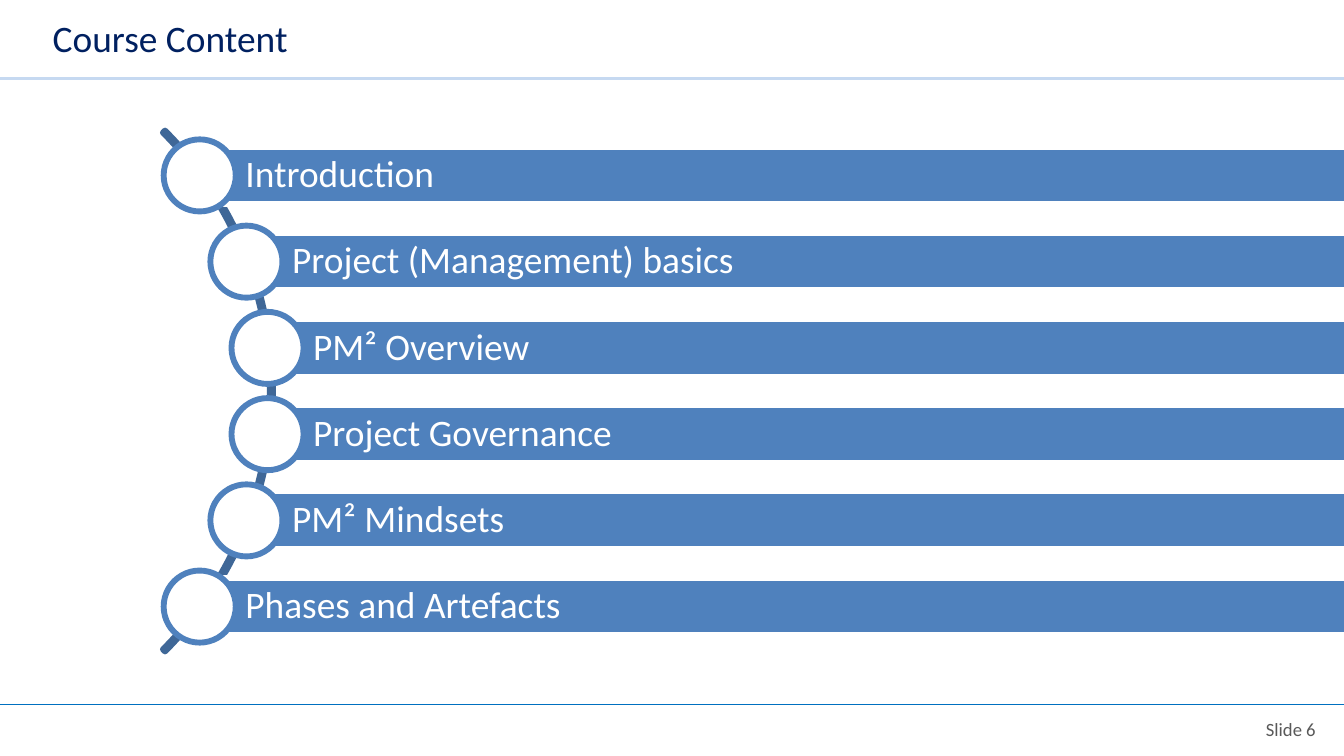
import math
import pptx
import pptx.util
import pptx.dml.color
import pptx.enum.shapes
import pptx.enum.text
import lxml.etree

Pt = pptx.util.Pt
Shape = pptx.enum.shapes.MSO_SHAPE
Align = pptx.enum.text.PP_ALIGN

TITLE = "Course Content"
FOOTER = "Slide 6"
TOPICS = [
    "Introduction",
    "Project (Management) basics",
    "PM² Overview",
    "Project Governance",
    "PM² Mindsets",
    "Phases and Artefacts",
]
THEME = {
    "font": "Calibri", "large": 20, "small": 10, "stroke": 3.15,
    "navy": "002060", "grey": "595959", "white": "FFFFFF",
    "bar": "4F81BD", "arc": "3F6797", "head": "C6D9F1", "foot": "0070C0",
}
WIDE, HIGH = 720, 405
MID_X, MID_Y = -51.1, 209.5
ARC, TRACK = 197.3, 195.8
STEP, BAR, DOT = 46.2, 30.9, 38.6
BAR_END = 727


def color(name):
    return pptx.dml.color.RGBColor.from_string(THEME[name])


def write(shape, text, size="large", ink="white", align=Align.LEFT,
          pads=(7.2, 3.6, 7.2, 3.6), space=1):
    frame = shape.text_frame
    frame.word_wrap = True
    frame.auto_size = pptx.enum.text.MSO_AUTO_SIZE.NONE
    frame.vertical_anchor = pptx.enum.text.MSO_ANCHOR.MIDDLE
    (frame.margin_left, frame.margin_top,
     frame.margin_right, frame.margin_bottom) = map(Pt, pads)
    para = frame.paragraphs[0]
    para.alignment = align
    para.line_spacing = space
    run = para.add_run()
    run.text = text
    run.font.name = THEME["font"]
    run.font.size = Pt(THEME[size])
    run.font.color.rgb = color(ink)


def draw(slide, kind, box, line, fill=None):
    shape = slide.shapes.add_shape(kind, *map(Pt, box))
    shape.shadow.inherit = False
    if fill:
        shape.fill.solid()
        shape.fill.fore_color.rgb = color(fill)
    else:
        shape.fill.background()
    shape.line.color.rgb = color(line)
    shape.line.width = Pt(THEME["stroke"])
    return shape


def rule(slide, y, ink, width):
    line = slide.shapes.add_connector(
        pptx.enum.shapes.MSO_CONNECTOR.STRAIGHT, 0, Pt(y), Pt(WIDE), Pt(y))
    line.line.color.rgb = color(ink)
    line.line.width = Pt(width)
    props = line._element.spPr
    lxml.etree.SubElement(props, pptx.oxml.ns.qn("a:effectLst"))


def main():
    deck = pptx.Presentation()
    deck.slide_width, deck.slide_height = Pt(WIDE), Pt(HIGH)
    slide = deck.slides.add_slide(deck.slide_layouts[5])

    title = slide.shapes.title
    title.left, title.top, title.width, title.height = map(Pt, (21, 0, 564, 40.5))
    write(title, TITLE, ink="navy")

    rule(slide, 42, "head", 1.75)
    rule(slide, 377.3, "foot", 0.25)
    note = slide.shapes.add_textbox(*map(Pt, (661.5, 381, 60, 19.4)))
    write(note, FOOTER, size="small", ink="grey", align=Align.CENTER)

    arc = draw(slide, Shape.BLOCK_ARC,
               (MID_X - ARC, MID_Y - ARC, 2 * ARC, 2 * ARC), "arc")
    for spot, value in enumerate((189, 27, 0.004)):
        arc.adjustments[spot] = value

    for row, topic in enumerate(TOPICS):
        rise = (row - (len(TOPICS) - 1) / 2) * STEP
        x = MID_X + math.sqrt(TRACK ** 2 - rise ** 2)
        y = MID_Y + rise
        bar = draw(slide, Shape.RECTANGLE,
                   (x, y - BAR / 2, BAR_END - x, BAR), "white", "bar")
        write(bar, topic, pads=(24.5, 4, 4, 4), space=0.9)
        draw(slide, Shape.OVAL,
             (x - DOT / 2, y - DOT / 2, DOT, DOT), "bar", "white")

    deck.save("out.pptx")


if __name__ == "__main__":
    main()
